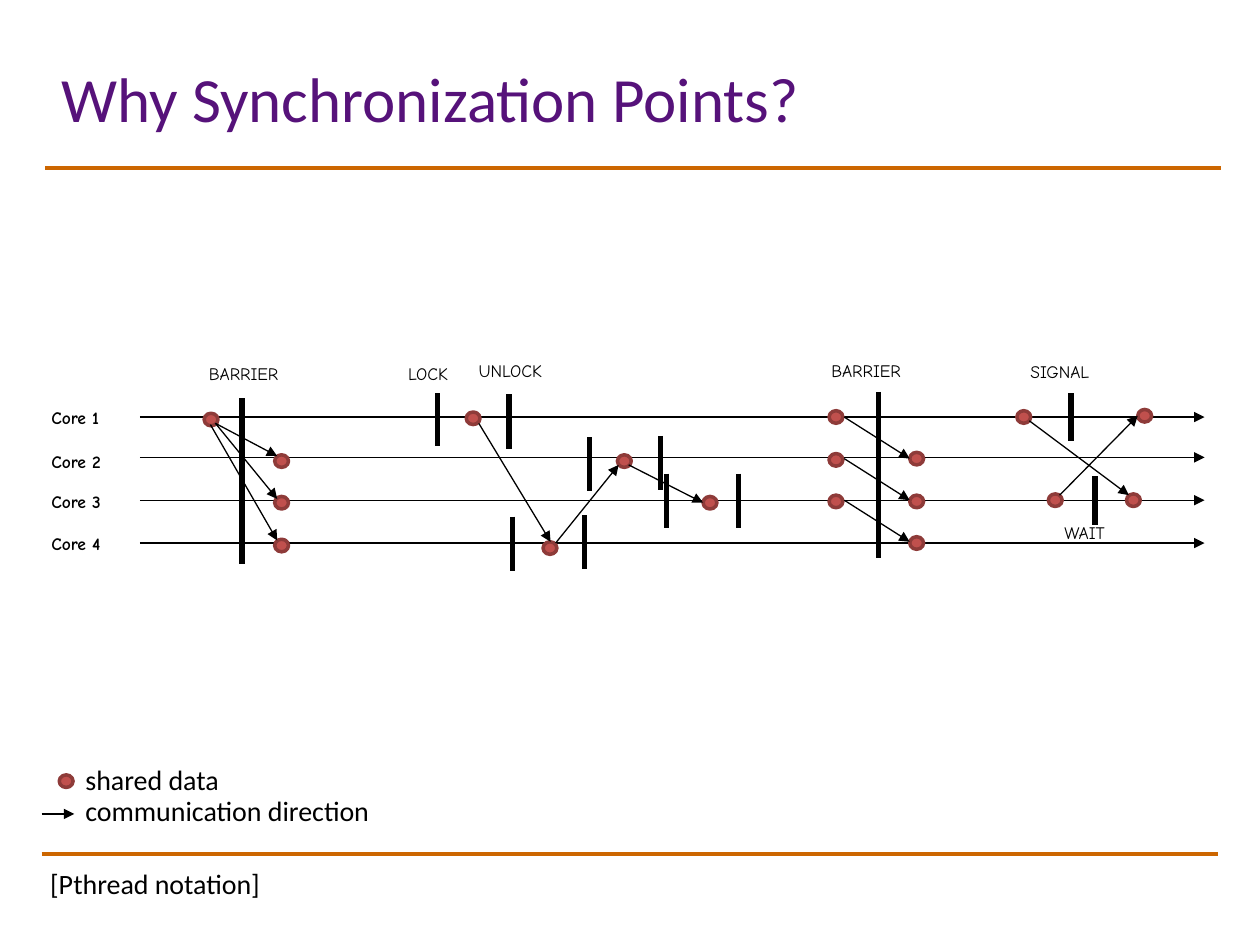
from lxml import etree
from pptx import Presentation
from pptx.dml.color import RGBColor
from pptx.enum.shapes import MSO_CONNECTOR, MSO_SHAPE
from pptx.enum.text import MSO_ANCHOR
from pptx.oxml.ns import qn
from pptx.util import Pt

PX = 9144
STRAIGHT = MSO_CONNECTOR.STRAIGHT
OVAL = MSO_SHAPE.OVAL
TOP, MIDDLE = MSO_ANCHOR.TOP, MSO_ANCHOR.MIDDLE
COLORS = {
    "rule": "CC6600",
    "title": "56127A",
    "ink": "000000",
    "dot": "C0504D",
    "dot_edge": "8E3B39",
}


class SlideBuilder:
    """Draws styled elements on one slide, with lengths in hundredths of an inch."""

    def __init__(self, deck):
        self.page = deck.slides.add_slide(deck.slide_layouts[6])

    def color(self, name):
        return RGBColor.from_string(COLORS[name])

    def line(self, x1, y1, x2, y2, width=0.75, color="ink"):
        ends = [value * PX for value in (x1, y1, x2, y2)]
        line = self.page.shapes.add_connector(STRAIGHT, *ends)
        line.line.width = Pt(width)
        line.line.color.rgb = self.color(color)
        etree.SubElement(line._element.spPr, qn("a:effectLst"))
        return line

    def arrow(self, x1, y1, x2, y2):
        line = self.line(x1, y1, x2, y2)
        etree.SubElement(line.line._get_or_add_ln(), qn("a:tailEnd"), type="triangle")

    def bar(self, x, top, bottom):
        self.line(x, top, x, bottom, 3)

    def dot(self, left, top):
        dot = self.page.shapes.add_shape(OVAL, left * PX, top * PX, 11 * PX, 10 * PX)
        dot.shadow.inherit = False
        dot.fill.solid()
        dot.fill.fore_color.rgb = self.color("dot")
        dot.line.color.rgb = self.color("dot_edge")
        dot.line.width = Pt(2)

    def text(self, words, left, top, width, height, size=16, font="Calibri",
             color="ink", bold=False, anchor=TOP, spacing=1.0):
        box = self.page.shapes.add_textbox(left * PX, top * PX, width * PX, height * PX)
        frame = box.text_frame
        frame.word_wrap = True
        frame.vertical_anchor = anchor
        para = frame.paragraphs[0]
        para.text = words
        para.line_spacing = spacing
        para.font.size = Pt(size)
        para.font.name = font
        para.font.bold = bold
        para.font.color.rgb = self.color(color)

    def label(self, words, left, top, width=90, bold=False):
        self.text(words, left, top, width, 27, 10, "Comic Neue", bold=bold)


def main():
    deck = Presentation()
    deck.slide_width, deck.slide_height = 1000 * PX, 750 * PX
    slide = SlideBuilder(deck)

    slide.line(36, 133, 969, 133, 2.25, "rule")
    slide.line(33, 678, 967, 678, 2.25, "rule")
    slide.text("Why Synchronization Points?", 39, 37, 836, 91, 36,
               color="title", anchor=MIDDLE, spacing=0.8)

    cores = [(318, 331), (353, 363), (385, 397), (418, 431)]
    for number, (label_top, axis) in enumerate(cores, 1):
        slide.label(f"Core {number}", 31, label_top, 81, bold=True)
        slide.arrow(111, axis, 956, axis)

    labels = [
        ("BARRIER", 156, 283), ("LOCK", 314, 283), ("UNLOCK", 370, 281),
        ("BARRIER", 650, 281), ("SIGNAL", 808, 282), ("WAIT", 835, 409),
    ]
    for label in labels:
        slide.label(*label)

    bars = [
        (192, 316, 448), (347, 312, 354), (404, 313, 356), (407, 410, 453),
        (464, 409, 452), (468, 347, 390), (524, 346, 389), (529, 376, 419),
        (586, 376, 419), (697, 311, 443), (850, 312, 350), (869, 378, 417),
    ]
    for bar in bars:
        slide.bar(*bar)

    dots = [
        (162, 328), (218, 361), (218, 394), (218, 428),
        (370, 327), (431, 430), (490, 361), (558, 394),
        (807, 326), (894, 392), (832, 392), (903, 325),
    ]
    for row in range(3):
        dots += [(658, 326 + round(row * 33.5)), (722, 359 + round(row * 33.5))]
    for dot in dots:
        slide.dot(*dot)

    arrows = [
        (167, 337, 220, 429), (171, 336, 220, 396), (171, 336, 220, 362),
        (380, 336, 437, 430), (441, 431, 491, 369), (499, 369, 558, 399),
        (817, 334, 896, 393), (841, 393, 903, 330),
    ]
    arrows += [(670, 331 + row * 33, 722, 364 + row * 33) for row in range(3)]
    for arrow in arrows:
        slide.arrow(*arrow)

    slide.dot(47, 615)
    slide.arrow(33, 646, 59, 646)
    slide.text("shared data", 58, 600, 183, 42)
    slide.text("communication direction", 58, 625, 300, 42)
    slide.text(" [Pthread notation]", 25, 683, 417, 58)
    deck.save("out.pptx")


if __name__ == "__main__":
    main()
